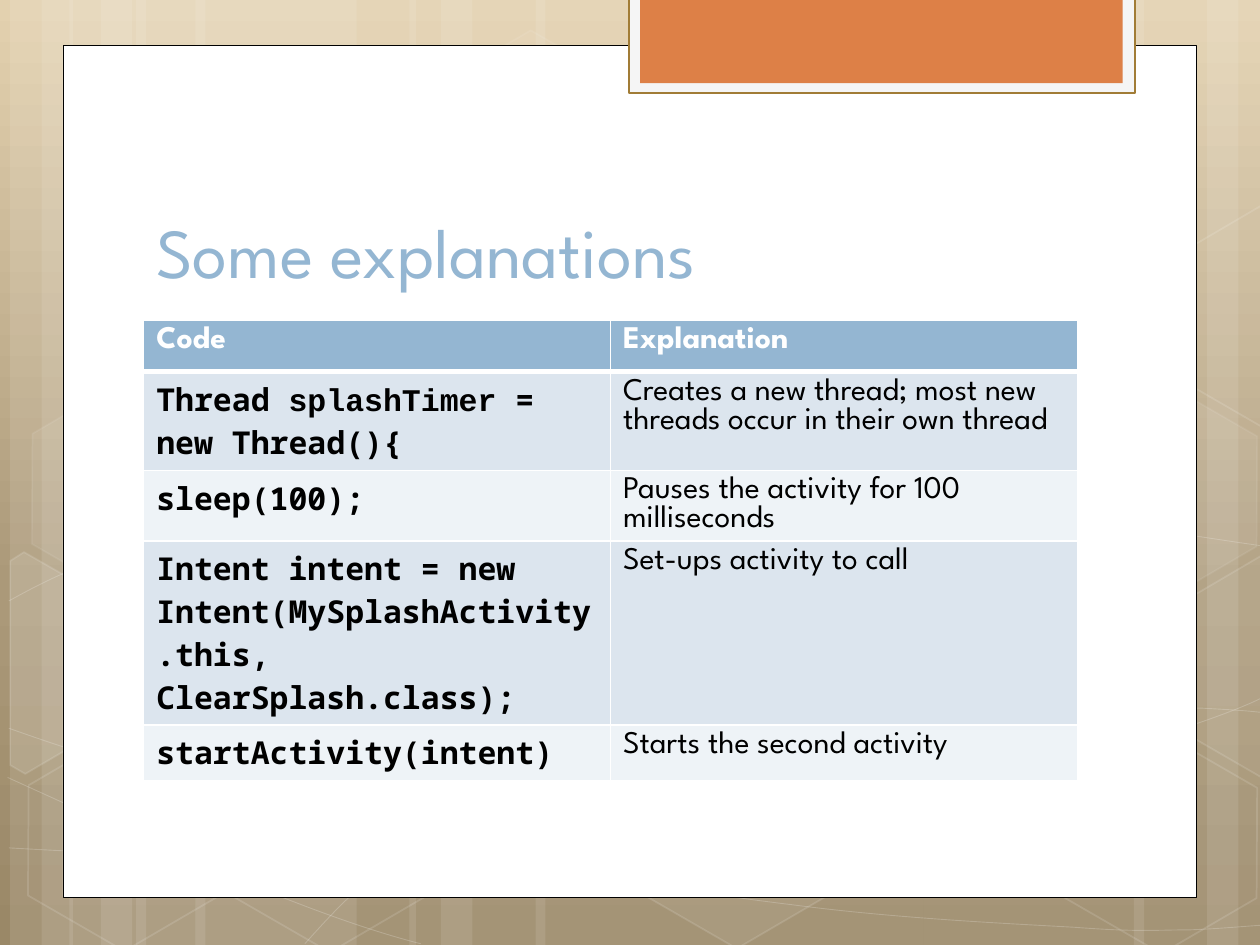
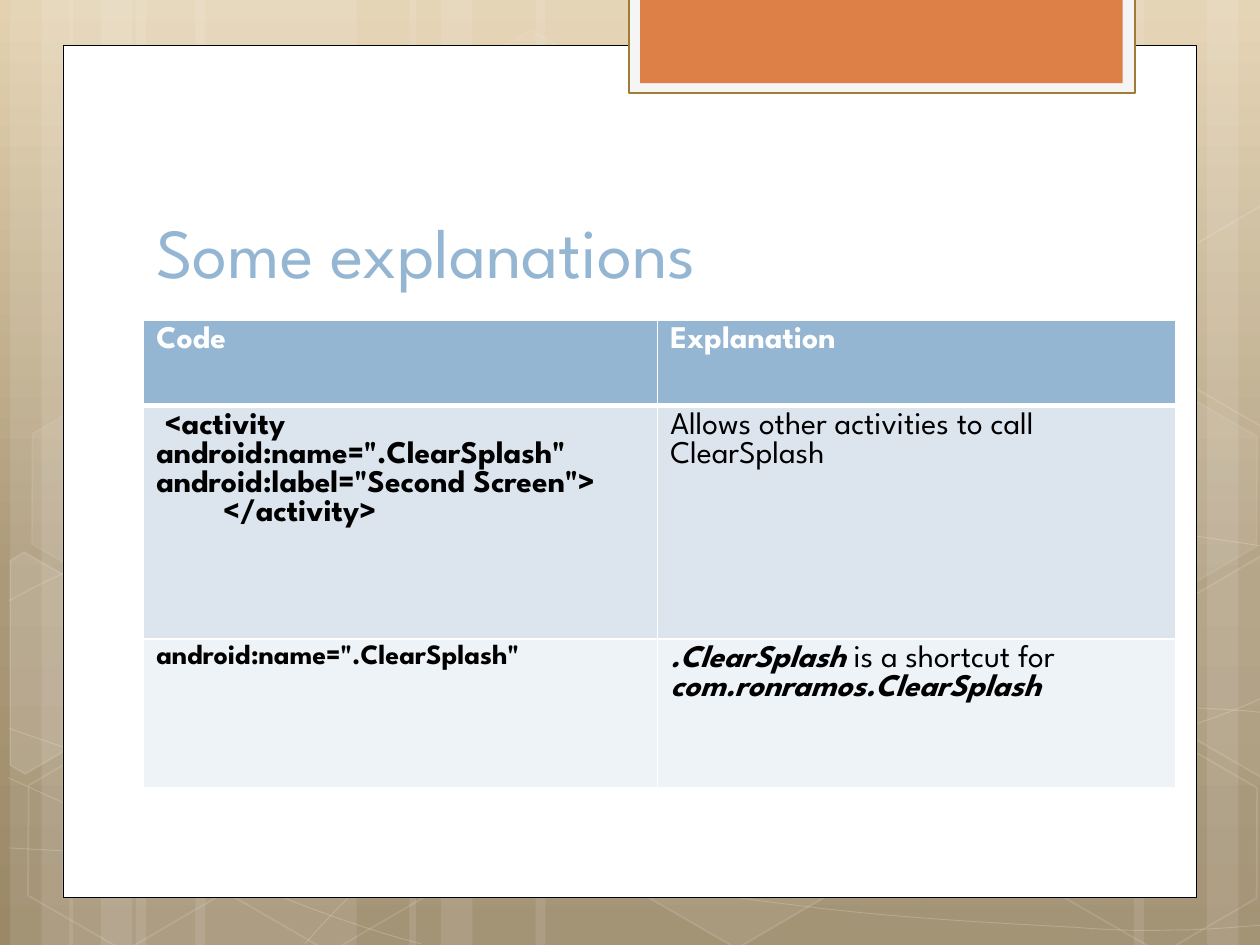
import math
from dataclasses import dataclass
from typing import NamedTuple

from lxml import etree
from pptx import Presentation
from pptx import util as u
from pptx.dml import color
from pptx.enum import shapes, text
from pptx.oxml import ns, parse_xml

SANS, MONO, COURIER = "League Spartan", "Noto Sans Mono", "Courier New"
WHITE, BLACK, BLUE, ORANGE = "FFFFFF", "000000", "94B6D2", "DD8047"
PALE, BRONZE = "F5F5F5", "A17C36"
ROW_TINTS = ("DCE5EE", "EEF3F7")
BACKGROUND = ((0, "E3D1AF"), (62, "AB9979"), (100, "9A8867"))
W, H = 10, 7.5
LEFT = 1.14
TILT = 30


class Box(NamedTuple):
    x: float
    y: float
    w: float
    h: float


class Look(NamedTuple):
    fill: str | None = None
    alpha: int = 100
    line: str | None = None
    width: float = 1
    line_alpha: int = 100


class Hexagon(NamedTuple):
    x: float
    y: float
    alpha: int
    line_alpha: int


class CutHexagon(NamedTuple):
    frame: Box
    alpha: int
    points: tuple


class Run(NamedTuple):
    text: str
    font: str = SANS
    size: int = 18
    bold: bool = False
    italic: bool = False
    colour: str = BLACK


class Para(NamedTuple):
    runs: tuple
    indent: float = 0


@dataclass
class CodeTable:
    widths: tuple
    heights: tuple
    frame_height: float
    rows: tuple


BARS = ((1.08, 1.75), (0.08, 0.5), (0.33, 0.83), (1.55, 1.75), (0.55, 0.5), (0.8, 0.83),
        (7.33, 1.75), (9.58, 0.5), (9, 0.83), (4.25, 3.08), (3.25, 0.5), (3.5, 0.83))

CURVES = (
    ((0.07, 6.73), (0.61, 6.76, 1.15, 6.79, 1.9, 6.78), (2.65, 6.77, 3.58, 6.75, 4.58, 6.65),
     (5.58, 6.55, 7, 6.36, 7.92, 6.17), (8.83, 5.98, 9.77, 5.68, 10.07, 5.51)),
    ((0.07, 4.77), (0.36, 4.61, 0.65, 4.46, 1.21, 4.31), (1.78, 4.16, 2.59, 3.94, 3.47, 3.87),
     (4.36, 3.8, 5.44, 3.79, 6.54, 3.87), (7.64, 3.95, 9.47, 4.26, 10.07, 4.34)),
    ((0.06, 6.17), (1.27, 6.72, 2.47, 7.27, 3.34, 7.49)),
    ((0.07, 5.78), (0.38, 5.89, 0.7, 6, 1.28, 6.16), (1.86, 6.31, 2.73, 6.56, 3.57, 6.73),
     (4.4, 6.9, 5.45, 7.08, 6.28, 7.18), (7.11, 7.29, 8, 7.33, 8.53, 7.36),
     (9.05, 7.4, 9.19, 7.38, 9.45, 7.38), (9.71, 7.37, 9.89, 7.35, 10.07, 7.34)),
    ((2.42, 7.49), (2.6, 7.29, 2.78, 7.09, 3.02, 6.91), (3.26, 6.73, 3.6, 6.53, 3.88, 6.39),
     (4.16, 6.25, 4.33, 6.19, 4.7, 6.09), (5.06, 5.99, 5.73, 5.85, 6.08, 5.78),
     (6.44, 5.71, 6.49, 5.71, 6.8, 5.69), (7.11, 5.66, 7.6, 5.63, 7.94, 5.62),
     (8.29, 5.61, 8.86, 5.62, 8.86, 5.62), (9.53, 5.62),
     (9.71, 5.63, 9.88, 5.64, 9.97, 5.65), (10.06, 5.66, 10.03, 5.65, 10.06, 5.66)),
)

HEXAGONS = (Hexagon(3.34, 0.36, 4, 8), Hexagon(4.97, 5.89, 6, 12), Hexagon(0.11, 5.91, 0, 12),
            Hexagon(0.14, 3.12, 7, 8), Hexagon(1.74, 5.92, 0, 12), Hexagon(7.53, 4.53, 10, 12),
            Hexagon(8.34, 5.93, 0, 12), Hexagon(8.34, 3.14, 7, 8))

CUT_HEXAGONS = (
    CutHexagon(Box(-0.33, 4.59, 1.38, 1.52), 10,
               ((0.08, 4.45), (0.19, 4.38), (0.96, 4.82), (0.95, 5.7), (0.2, 6.14), (0.08, 6.07))),
    CutHexagon(Box(9.17, 4.44, 1.36, 1.52), 4,
               ((9.26, 4.85), (10.01, 4.41), (10.09, 4.46), (10.09, 6.13), (10.02, 6.17), (9.26, 5.73))),
    CutHexagon(Box(9.17, 1.65, 1.36, 1.52), 0,
               ((9.26, 2.07), (10.01, 1.63), (10.1, 1.68), (10.09, 3.35), (10.02, 3.39), (9.26, 2.95))),
)

PANELS = (
    (Box(0.5, 0.36, 9, 6.76), Look(WHITE, line=BLACK, width=0.5)),
    (Box(4.99, -0.02, 4.02, 0.76), Look(PALE, line=BRONZE, width=1.25)),
    (Box(5.08, -0.02, 3.83, 0.68), Look(ORANGE)),
)


def rgb(value: str) -> color.RGBColor:
    return color.RGBColor.from_string(value)


def paint(fill, value: str | None, alpha: int = 100) -> None:
    if value is None or alpha == 0:
        fill.background()
        return
    fill.solid()
    fill.fore_color.rgb = rgb(value)
    if alpha < 100:
        clr = fill._xPr.find(ns.qn("a:solidFill"))[0]
        etree.SubElement(clr, ns.qn("a:alpha")).set("val", str(alpha * 1000))


def style(sp, look: Look) -> None:
    sp.shadow.inherit = False
    paint(sp.fill, look.fill, look.alpha)
    paint(sp.line.fill, look.line, look.line_alpha)
    if look.line:
        sp.line.width = u.Pt(look.width)


def add_preset(s, kind, box: Box, look: Look):
    sp = s.shapes.add_shape(kind, *(u.Inches(v) for v in box))
    style(sp, look)
    return sp


def add_outline(s, points, look: Look, close: bool = False):
    start, *rest = [(u.Inches(x), u.Inches(y)) for x, y in points]
    builder = s.shapes.build_freeform(*start)
    builder.add_line_segments(rest, close=close)
    sp = builder.convert_to_shape()
    style(sp, look)
    return sp


def add_curve(s, start: tuple, segments: list) -> None:
    sp = add_outline(s, [start, *(seg[-2:] for seg in segments)],
                     Look(line=WHITE, width=0.5, line_alpha=20))
    for line, seg in zip(list(sp.element.iter(ns.qn("a:lnTo"))), segments):
        if len(seg) == 6:
            bezier = etree.Element(ns.qn("a:cubicBezTo"))
            for x, y in zip(seg[::2], seg[1::2]):
                pt = etree.SubElement(bezier, ns.qn("a:pt"))
                pt.set("x", str(u.Inches(x) - sp.left))
                pt.set("y", str(u.Inches(y) - sp.top))
            line.getparent().replace(line, bezier)


def add_cut_hexagon(s, cut: CutHexagon) -> None:
    cx, cy = cut.frame.x + cut.frame.w / 2, cut.frame.y + cut.frame.h / 2
    cos, sin = math.cos(math.radians(TILT)), math.sin(math.radians(TILT))
    upright = [(cx + (x - cx) * cos + (y - cy) * sin, cy - (x - cx) * sin + (y - cy) * cos)
               for x, y in cut.points]
    sp = add_outline(s, upright, Look(WHITE, cut.alpha, WHITE, 1, 12), close=True)
    sp.rotation = TILT


def set_background(master) -> None:
    fill = master.background.fill
    fill.gradient()
    fill.gradient_angle = 270
    stops = fill._fill._gradFill.find(ns.qn("a:gsLst"))
    for stop in list(stops):
        stops.remove(stop)
    for position, value in BACKGROUND:
        stops.append(parse_xml(f'<a:gs {ns.nsdecls("a")} pos="{position * 1000}">'
                               f'<a:srgbClr val="{value}"/></a:gs>'))


def draw_backdrop(s) -> None:
    rect, hexagon = shapes.MSO_SHAPE.RECTANGLE, shapes.MSO_SHAPE.HEXAGON
    for x, w in BARS:
        add_preset(s, rect, Box(x, 0, w, H), Look(WHITE, 10))
    for start, *segments in CURVES:
        add_curve(s, start, segments)
    for h in HEXAGONS:
        sp = add_preset(s, hexagon, Box(h.x, h.y, 1.75, 1.52),
                        Look(WHITE, h.alpha, WHITE, 1, h.line_alpha))
        sp.adjustments[0] = 0.285
        sp.rotation = TILT
    for cut in CUT_HEXAGONS:
        add_cut_hexagon(s, cut)
    for box, look in PANELS:
        add_preset(s, rect, box, look)


def share_backdrop(s, layout) -> None:
    draw_backdrop(s)
    for sp in list(s.shapes):
        if not sp.is_placeholder:
            layout.shapes.element.append(sp.element)


def write(p, words: str, *, font: str = SANS, size: int = 18, bold: bool = False,
          italic: bool = False, colour: str = BLACK) -> None:
    for i, line in enumerate(words.split("\n")):
        if i:
            p.add_line_break()
        r = p.add_run()
        r.text = line
        r.font.name, r.font.size = font, u.Pt(size)
        r.font.bold, r.font.italic = bold, italic
        r.font.color.rgb = rgb(colour)


def add_title(s, words: str) -> None:
    sp = s.shapes.title
    sp.left, sp.top, sp.width, sp.height = (u.Inches(v) for v in Box(LEFT, 1.12, 7.68, 1.25))
    tf = sp.text_frame
    tf.word_wrap = True
    tf.auto_size = text.MSO_AUTO_SIZE.NONE
    tf.vertical_anchor = text.MSO_ANCHOR.BOTTOM
    p = tf.paragraphs[0]
    p.alignment = text.PP_ALIGN.LEFT
    write(p, words, size=40, colour=BLUE)


def set_borders(cell, row: int) -> None:
    widths = {"L": 1, "R": 1, "T": 3 if row == 1 else 1, "B": 3 if row == 0 else 1}
    for i, (side, width) in enumerate(widths.items()):
        cell._tc.get_or_add_tcPr().insert(i, parse_xml(
            f'<a:ln{side} {ns.nsdecls("a")} w="{u.Pt(width)}"><a:solidFill>'
            f'<a:srgbClr val="{WHITE}"/></a:solidFill></a:ln{side}>'))


def fill_cell(cell, paras: tuple, row: int) -> None:
    paint(cell.fill, ROW_TINTS[(row - 1) % 2] if row else BLUE)
    set_borders(cell, row)
    tf = cell.text_frame
    for i, para in enumerate(paras):
        p = tf.add_paragraph() if i else tf.paragraphs[0]
        if para.indent:
            p._p.get_or_add_pPr().set("marL", str(u.Inches(para.indent)))
        for run in para.runs:
            write(p, run.text, font=run.font, size=run.size, bold=run.bold,
                  italic=run.italic, colour=run.colour)


def add_code_table(s, spec: CodeTable) -> None:
    rows = (HEADER, *spec.rows)
    frame = s.shapes.add_table(len(rows), 2, u.Inches(LEFT), u.Inches(2.54),
                               u.Inches(sum(spec.widths)), u.Inches(spec.frame_height))
    table = frame.table
    for column, width in zip(table.columns, spec.widths):
        column.width = u.Inches(width)
    for row, height in zip(table.rows, spec.heights):
        row.height = u.Inches(height)
    frame.height = u.Inches(spec.frame_height)
    for i, row in enumerate(rows):
        for j, paras in enumerate(row):
            fill_cell(table.cell(i, j), paras, i)


def cell(words: str, **fmt) -> tuple:
    return (Para((Run(words, **fmt),)),)


def code(words: str) -> tuple:
    return cell(words, font=MONO, bold=True)


HEADER = tuple(cell(words, bold=True, colour=WHITE) for words in ("Code", "Explanation"))

THREAD_TABLE = CodeTable((7.41 / 2,) * 2, (0.41,) * 5, 3.81, (
    ((Para((Run("Thread ", MONO, bold=True), Run("splashTimer", COURIER, bold=True),
            Run(" = new Thread(){", MONO, bold=True))),),
     cell("Creates a new thread; most new threads occur in their own thread")),
    (code("sleep(100);"), cell("Pauses the activity for 100 milliseconds")),
    (code("Intent intent = new Intent(MySplashActivity.this, ClearSplash.class);"),
     cell("Set-ups activity to call")),
    (code("startActivity(intent)"), cell("Starts the second activity")),
))

MANIFEST_TABLE = CodeTable((4.08, 4.11), (0.68, 1.85, 1.18), 3.76, (
    ((Para((Run(' <activity\nandroid:name=".ClearSplash"\nandroid:label="Second Screen">', bold=True),)),
      Para((Run("</activity>", bold=True),), 0.53)),
     cell("Allows other activities to call ClearSplash")),
    (cell('android:name=".ClearSplash"', size=16, bold=True),
     (Para((Run(".ClearSplash", bold=True, italic=True), Run(" is a shortcut for "),
            Run("com.ronramos.ClearSplash", bold=True, italic=True))),)),
))


def main() -> None:
    prs = Presentation()
    prs.slide_width, prs.slide_height = u.Inches(W), u.Inches(H)
    layout = prs.slide_layouts.get_by_name("Title Only")
    set_background(prs.slide_master)
    for i, spec in enumerate((THREAD_TABLE, MANIFEST_TABLE)):
        s = prs.slides.add_slide(layout)
        if i == 0:
            share_backdrop(s, layout)
        add_title(s, "Some explanations")
        add_code_table(s, spec)
    prs.save("out.pptx")


if __name__ == "__main__":
    main()
